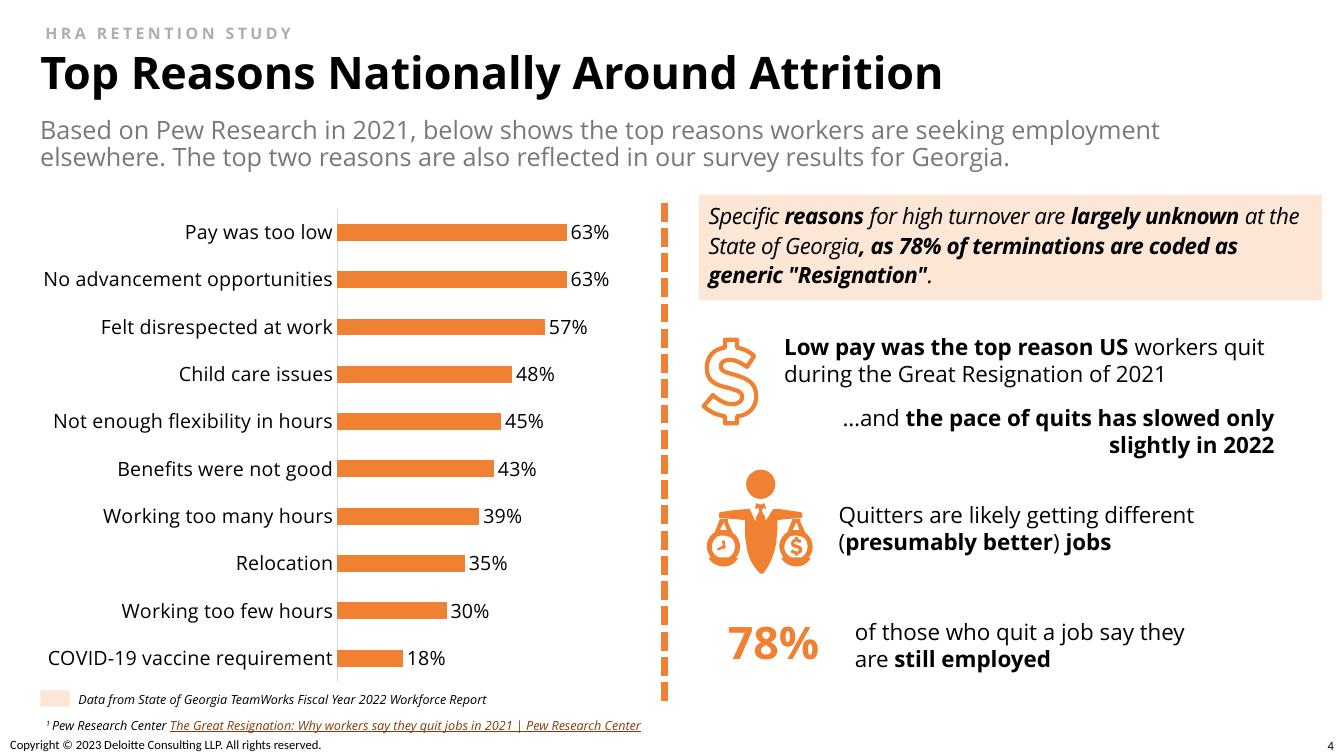
import dataclasses

import lxml.etree
import pptx
import pptx.chart.data
import pptx.dml.color
import pptx.enum.chart
import pptx.enum.dml
import pptx.enum.shapes
import pptx.enum.text
import pptx.oxml
import pptx.oxml.ns
import pptx.util

PX = 9144
ALIGN = pptx.enum.text.PP_ALIGN
ANCHOR = pptx.enum.text.MSO_ANCHOR
SHAPE = pptx.enum.shapes.MSO_SHAPE
BOLD = {"bold": True}


@dataclasses.dataclass(frozen=True)
class Theme:
    heading: str = "Open Sans"
    small_print: str = "Calibri"
    black: str = "000000"
    orange: str = "F08132"
    peach: str = "FCE6D6"
    subtitle_gray: str = "787878"
    eyebrow_gray: str = "AEAEAE"
    axis_gray: str = "D9D9D9"
    link_brown: str = "833C0B"
    title_size: float = 32
    subtitle_size: float = 18
    body_size: float = 16
    label_size: float = 14
    eyebrow_size: float = 11.3
    note_size: float = 9


def rgb(value):
    return pptx.dml.color.RGBColor.from_string(value)


def emphasise(text):
    return [(part, BOLD if i % 2 else {}) for i, part in enumerate(text.split("*")) if part]


def bezier(start, curve, steps=8):
    x0, y0 = start
    x1, y1, x2, y2, x3, y3 = curve
    for step in range(1, steps + 1):
        t = step / steps
        a, b, c, d = (1 - t) ** 3, 3 * t * (1 - t) ** 2, 3 * t * t * (1 - t), t ** 3
        yield a * x0 + b * x1 + c * x2 + d * x3, a * y0 + b * y1 + c * y2 + d * y3


def flatten(contour):
    points = [contour[0]]
    for segment in contour[1:]:
        points.extend([segment] if len(segment) == 2 else bezier(points[-1], segment))
    return points


DOLLAR = [[
    (31, 35), (20, 32, 17, 31, 17, 26), (17, 23, 20, 20, 26, 20), (31, 20, 37, 23, 43, 27),
    (50, 16), (45, 12, 40, 9, 33, 8), (33, 0), (21, 0), (21, 8), (10, 9, 3, 17, 3, 28),
    (3, 41, 11, 45, 25, 48), (36, 51, 38, 53, 38, 57), (38, 61, 34, 64, 28, 64),
    (21, 64, 15, 60, 9, 55), (0, 66), (6, 72, 14, 75, 21, 76), (21, 83), (33, 83), (33, 76),
    (45, 75, 52, 67, 52, 56), (52, 44, 45, 39, 31, 35)]]
TORSO = [[
    (743, 504), (745, 508, 747, 512, 749, 517), (750, 515), (750, 513), (753, 508), (753, 506),
    (752, 504), (749, 505), (750, 499), (753, 501, 756, 501, 758, 499), (760, 505), (757, 504),
    (756, 506), (756, 508), (759, 513), (759, 515), (760, 516), (767, 505), (773, 505),
    (780, 506), (793, 508), (795, 508, 796, 510, 796, 512), (796, 513, 795, 514, 793, 514),
    (780, 515), (771, 516), (771, 526), (771, 530, 770, 534, 770, 538),
    (768, 549, 765, 559, 757, 569), (754, 569), (744, 559, 741, 549, 740, 538),
    (739, 534, 739, 530, 739, 526), (739, 516), (729, 515), (715, 514),
    (713, 514, 713, 513, 713, 511), (713, 509, 714, 508, 715, 508), (729, 506), (742, 505)]]
SCALE_PAN = [
    [(13, 0), (8, 13), (3, 16, 0, 22, 0, 27), (0, 31, 2, 35, 4, 38), (2, 39),
     (5, 44, 11, 47, 17, 47), (23, 47, 28, 44, 31, 39), (29, 38), (32, 35, 33, 31, 33, 27),
     (33, 22, 30, 16, 26, 14), (21, 3), (21, 0)],
    [(28, 27), (28, 33, 25, 36, 22, 38), (12, 38), (8, 36, 5, 33, 5, 28),
     (5, 23, 8, 19, 11, 17), (14, 16, 20, 16, 23, 18), (26, 19, 28, 23, 28, 27)],
    [(17, 3), (20, 11), (13, 11)]]
CLOCK_HANDS = [[
    (719, 541), (719, 537), (719, 536, 716, 536, 716, 537), (717, 541), (712, 544),
    (711, 544, 711, 546, 713, 546), (717, 544), (718, 545), (720, 542)]]


@dataclasses.dataclass
class SlideBuilder:
    slide: object
    theme: Theme

    def paint(self, shape, fill=None, line=None, width=0):
        shape.shadow.inherit = False
        if fill:
            shape.fill.solid()
            shape.fill.fore_color.rgb = rgb(fill)
        else:
            shape.fill.background()
        if line:
            shape.line.color.rgb = rgb(line)
            shape.line.width = pptx.util.Pt(width)
        else:
            shape.line.fill.background()

    def put_text(self, shape, runs, size, color=None, font=None, style=None, spacing=None,
                 align=ALIGN.LEFT, anchor=ANCHOR.TOP, inset=True, wrap=True, tracking=None):
        frame = shape.text_frame
        layout = {"word_wrap": wrap, "vertical_anchor": anchor,
                  "auto_size": pptx.enum.text.MSO_AUTO_SIZE.NONE}
        if not inset:
            layout.update(dict.fromkeys(
                ("margin_left", "margin_top", "margin_right", "margin_bottom"), 0))
        for name, value in layout.items():
            setattr(frame, name, value)
        paragraph = frame.paragraphs[0]
        for name, value in {"alignment": align, "line_spacing": spacing}.items():
            setattr(paragraph, name, value)
        for text, override in runs:
            run = paragraph.add_run()
            run.text = text
            values = {"name": font or self.theme.heading, "size": pptx.util.Pt(size),
                      "bold": False, **(style or {}), **override}
            ink = values.pop("color", color or self.theme.black)
            baseline = values.pop("baseline", None)
            for name, value in values.items():
                setattr(run.font, name, value)
            run.font.color.rgb = rgb(ink)
            for name, value in {"spc": tracking, "baseline": baseline}.items():
                if value is not None:
                    run._r.get_or_add_rPr().set(name, str(value))

    def title(self, text, box, **format):
        heading = self.slide.shapes.title
        for name, value in zip(("left", "top", "width", "height"), box):
            setattr(heading, name, value * PX)
        self.put_text(heading, [(text, BOLD)], **format)

    def text(self, text, box, **format):
        runs = emphasise(text) if isinstance(text, str) else text
        self.put_text(self.slide.shapes.add_textbox(*(v * PX for v in box)), runs, **format)

    def shape(self, kind, box, fill):
        shape = self.slide.shapes.add_shape(kind, *(v * PX for v in box))
        self.paint(shape, fill)
        return shape

    def icon(self, contours, left=0, top=0, scale=1, **colors):
        outlines = [[((left + x * scale) * PX, (top + y * scale) * PX) for x, y in flatten(c)]
                    for c in contours]
        builder = self.slide.shapes.build_freeform(*outlines[0][0])
        builder.add_line_segments(outlines[0][1:], close=True)
        for outline in outlines[1:]:
            builder.move_to(*outline[0])
            builder.add_line_segments(outline[1:], close=True)
        self.paint(builder.convert_to_shape(), **colors)

    def dotted_line(self, x, top, bottom, color, width):
        divider = self.slide.shapes.add_connector(
            pptx.enum.shapes.MSO_CONNECTOR.STRAIGHT, x * PX, top * PX, x * PX, bottom * PX)
        divider.line.color.rgb = rgb(color)
        divider.line.width = pptx.util.Pt(width)
        divider.line.dash_style = pptx.enum.dml.MSO_LINE.SQUARE_DOT
        lxml.etree.SubElement(divider._element.spPr, pptx.oxml.ns.qn("a:effectLst"))

    def bar_chart(self, shares, box, plot):
        data = pptx.chart.data.CategoryChartData(number_format="0%")
        data.categories = list(shares)
        data.add_series("Series 1", [share / 100 for share in shares.values()])
        enums = pptx.enum.chart
        chart = self.slide.shapes.add_chart(
            enums.XL_CHART_TYPE.BAR_CLUSTERED, *(v * PX for v in box), data).chart
        bars, reasons, percent = chart.plots[0], chart.category_axis, chart.value_axis
        bars.has_data_labels = True
        labels = bars.data_labels
        none = enums.XL_TICK_MARK.NONE
        for target, values in (
            (chart, {"has_legend": False, "has_title": False}),
            (bars, {"gap_width": 182, "vary_by_categories": False}),
            (reasons, {"reverse_order": True, "major_tick_mark": none, "minor_tick_mark": none,
                       "has_major_gridlines": False}),
            (percent, {"visible": False, "minimum_scale": 0, "maximum_scale": 1,
                       "has_major_gridlines": False}),
            (labels, {"show_value": True, "number_format": "0%", "number_format_is_linked": False,
                      "position": enums.XL_LABEL_POSITION.OUTSIDE_END}),
        ):
            for name, value in values.items():
                setattr(target, name, value)
        for font in (chart.font, reasons.tick_labels.font, labels.font):
            font.name, font.size = self.theme.heading, pptx.util.Pt(self.theme.label_size)
            font.color.rgb = rgb(self.theme.black)
        reasons.format.line.color.rgb = rgb(self.theme.axis_gray)
        reasons.format.line.width = pptx.util.Pt(0.75)
        fill = bars.series[0].format.fill
        fill.solid()
        fill.fore_color.rgb = rgb(self.theme.orange)
        area = chart._chartSpace.chart.plotArea
        for layout in area.findall(pptx.oxml.ns.qn("c:layout")):
            area.remove(layout)
        values = {"layoutTarget": "inner", "xMode": "edge", "yMode": "edge",
                  **dict(zip("xywh", plot))}
        items = "".join(f'<c:{name} val="{value}"/>' for name, value in values.items())
        area.insert(0, pptx.oxml.parse_xml(
            f'<c:layout {pptx.oxml.ns.nsdecls("c")}><c:manualLayout>{items}'
            '</c:manualLayout></c:layout>'))


def main():
    deck = pptx.Presentation()
    deck.slide_width, deck.slide_height = 1333 * PX, 750 * PX
    theme = Theme()
    page = SlideBuilder(deck.slides.add_slide(deck.slide_layouts[5]), theme)

    page.text("HRA RETENTION STUDY", (45, 23, 460, 21), size=theme.eyebrow_size,
              color=theme.eyebrow_gray, style=BOLD, inset=False, tracking=250)
    page.title("Top Reasons Nationally Around Attrition", (30, 37, 1150, 75),
               size=theme.title_size, spacing=0.9, anchor=ANCHOR.MIDDLE)
    page.text("Based on Pew Research in 2021, below shows the top reasons workers are seeking "
              "employment elsewhere. The top two reasons are also reflected in our survey results "
              "for Georgia.", (30, 112, 1150, 37), size=theme.subtitle_size,
              color=theme.subtitle_gray, spacing=0.9)

    page.bar_chart({
        "Pay was too low": 63, "No advancement opportunities": 63, "Felt disrespected at work": 57,
        "Child care issues": 48, "Not enough flexibility in hours": 45, "Benefits were not good": 43,
        "Working too many hours": 39, "Relocation": 35, "Working too few hours": 30,
        "COVID-19 vaccine requirement": 18}, (23, 193, 688, 500), (0.453, 0.028, 0.525, 0.939))
    page.dotted_line(659, 201, 701, theme.orange, 4.5)

    callout = page.shape(SHAPE.RECTANGLE, (693, 193, 618, 105), theme.peach)
    page.put_text(callout, emphasise(
        "Specific* reasons *for high turnover are *largely unknown *at the State of Georgia"
        "*, as 78% of terminations are coded as generic \"Resignation\"*."),
        size=theme.body_size, style={"italic": True}, spacing=1.1, tracking=-30)

    page.icon(DOLLAR, 698, 337, line=theme.orange, width=3)
    page.shape(SHAPE.OVAL, (740, 466, 29, 29), theme.orange)
    page.icon(TORSO, fill=theme.orange)
    for pan_left in (701, 773):
        page.icon(SCALE_PAN, pan_left, 515, fill=theme.orange)
    page.icon(CLOCK_HANDS, fill=theme.orange)
    page.icon(DOLLAR, 784, 533, 0.22, fill=theme.orange)

    for finding, box, format in (
        ("*Low pay was the top reason US *workers quit during the Great Resignation of 2021",
         (768, 326, 497, 64), {}),
        ("…and *the pace of quits has slowed only slightly in 2022*",
         (777, 396, 497, 64), {"align": ALIGN.RIGHT}),
        ("Quitters are likely getting different (*presumably better*) *jobs*",
         (822, 492, 426, 64), {}),
        ("of those who quit a job say they are *still employed*",
         (848, 613, 366, 54), {"inset": False}),
    ):
        page.text(finding, box, size=theme.body_size, **format)
    page.text("*78%*", (712, 605, 131, 64), size=theme.title_size, color=theme.orange)

    page.shape(SHAPE.RECTANGLE, (40, 685, 29, 16), theme.peach)
    note = {"size": theme.note_size, "style": {"italic": True}}
    page.text("Data from State of Georgia TeamWorks Fiscal Year 2022 Workforce Report",
              (68, 681, 476, 25), **note)
    page.text([("1 ", {"baseline": 30000}), ("Pew Research Center ", {}),
               ("The Great Resignation: Why workers say they quit jobs in 2021 | Pew Research Center",
                {"color": theme.link_brown, "underline": True})],
              (36, 707, 625, 25), wrap=False, **note)
    small = {"size": theme.note_size, "font": theme.small_print, "inset": False}
    page.text("Copyright © 2023 Deloitte Consulting LLP. All rights reserved.",
              (10, 733, 586, 14), spacing=pptx.util.Pt(9.5), **small)
    page.text("4", (1289, 732, 34, 15), align=ALIGN.RIGHT, **small)
    deck.save("out.pptx")


if __name__ == "__main__":
    main()
